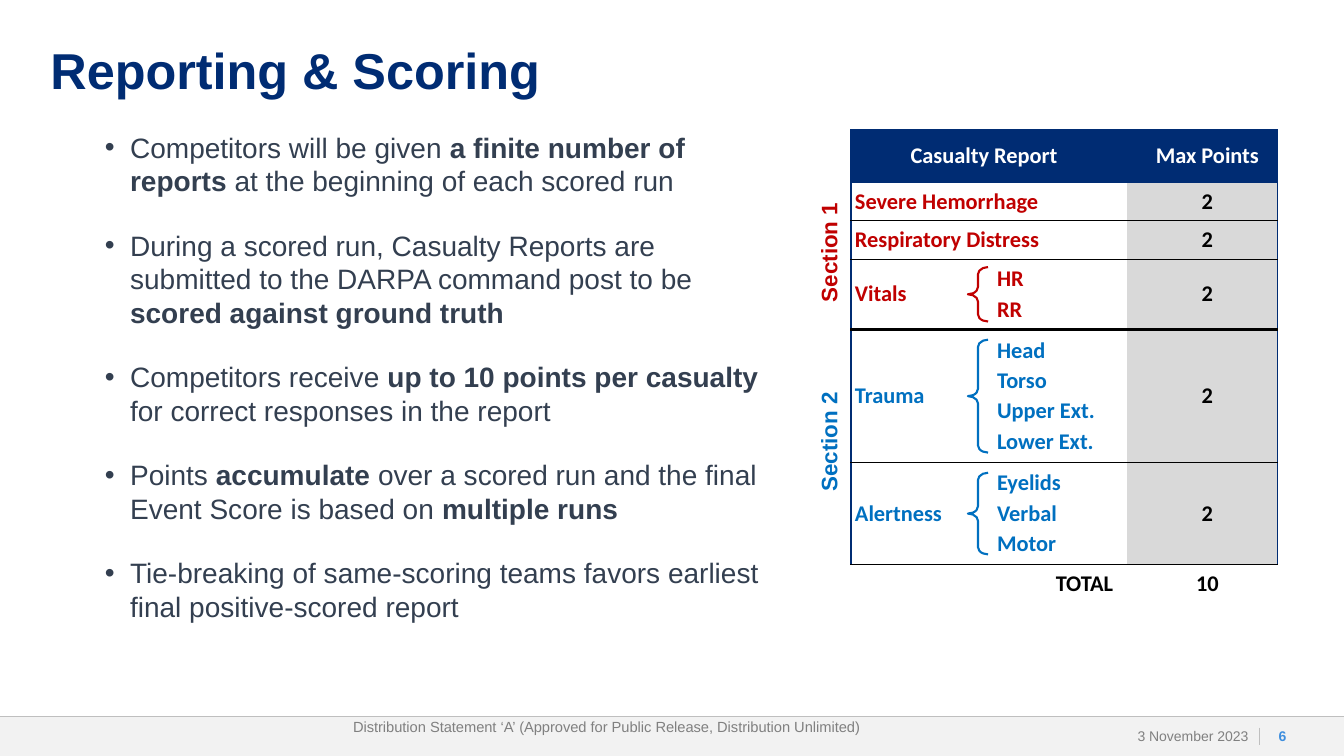
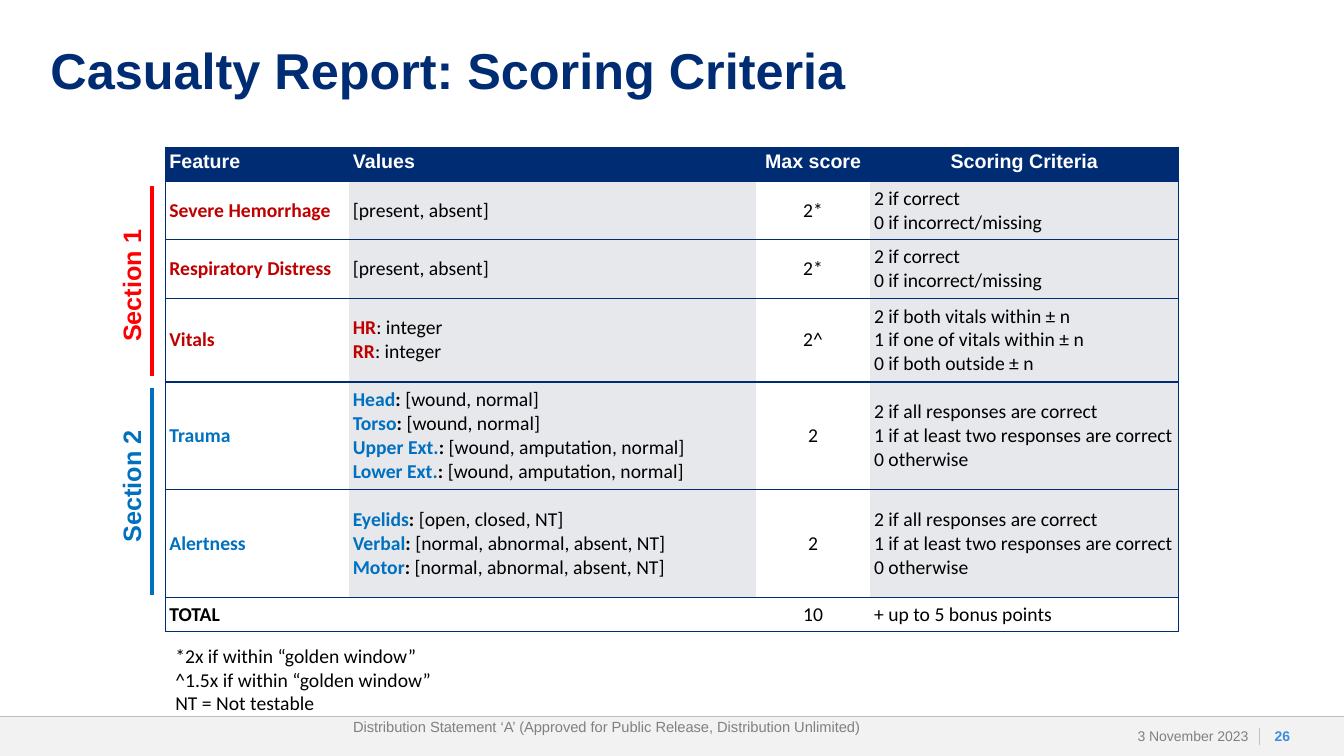
import pptx
import pptx.util
import pptx.dml.color
import pptx.enum.shapes
import pptx.enum.text
import pptx.oxml
import pptx.oxml.ns
from lxml import etree

RGBColor = pptx.dml.color.RGBColor
Inches = pptx.util.Inches
Pt = pptx.util.Pt
Shape = pptx.enum.shapes.MSO_SHAPE
Align = pptx.enum.text.PP_ALIGN
Anchor = pptx.enum.text.MSO_ANCHOR
qn = pptx.oxml.ns.qn

NAVY = RGBColor(0x00, 0x2C, 0x73)
SLATE = RGBColor(0x33, 0x3F, 0x50)
CRIMSON = RGBColor(0xC0, 0x00, 0x00)
RED = RGBColor(0xFF, 0x00, 0x00)
BLUE = RGBColor(0x00, 0x70, 0xC0)
SKY = RGBColor(0x3E, 0x8E, 0xDE)
BLACK = RGBColor(0x00, 0x00, 0x00)
WHITE = RGBColor(0xFF, 0xFF, 0xFF)
GRAY = RGBColor(0x80, 0x80, 0x80)
SILVER = RGBColor(0xBF, 0xBF, 0xBF)
ASH = RGBColor(0xD9, 0xD9, 0xD9)
PALE = RGBColor(0xE7, 0xE8, 0xEB)
BAND = RGBColor(0xF2, 0xF2, 0xF2)

WIDE, HIGH = 13.33, 7.5
LEFT, MID, RIGHT = Align.LEFT, Align.CENTER, Align.RIGHT
PLAIN_STYLE = "{2D5ABB26-0587-4C30-8999-92F81FD0307C}"


def inch(*sizes):
    return [Inches(size) for size in sizes]


def write(frame, paras, size, color, bold=False, font="Arial", align=LEFT, after=0):
    """Fill a frame; a paragraph is a string or a list of (text, colour, bold)."""
    for i, parts in enumerate(paras):
        para = frame.add_paragraph() if i else frame.paragraphs[0]
        para.alignment = align
        para.space_after = Pt(after)
        if isinstance(parts, str):
            parts = [(parts, color, bold)]
        for text, tint, heavy in parts:
            run = para.add_run()
            run.text = text
            run.font.name, run.font.size = font, Pt(size)
            run.font.bold, run.font.color.rgb = heavy, tint


def label(slide, box, paras, size, color, inset=(0.1, 0.05, 0.1, 0.05),
          anchor=Anchor.TOP, wrap=True, **look):
    shape = slide.shapes.add_textbox(*inch(*box))
    frame = shape.text_frame
    frame.word_wrap = wrap
    frame.vertical_anchor = anchor
    (frame.margin_left, frame.margin_top,
     frame.margin_right, frame.margin_bottom) = inch(*inset)
    write(frame, paras, size, color, **look)
    return shape


def line(slide, ends, color, width):
    link = slide.shapes.add_connector(
        pptx.enum.shapes.MSO_CONNECTOR.STRAIGHT, *inch(*ends))
    link.line.color.rgb, link.line.width = color, Pt(width)
    etree.SubElement(link._element.spPr, qn("a:effectLst"))


def upright(slide, box, text, size, color):
    """Bold label that reads from bottom to top."""
    label(slide, box, [text], size, color, bold=True, wrap=False).rotation = 270


def footer(slide, number):
    top, tall = 7.11, 0.39
    band = slide.shapes.add_shape(Shape.RECTANGLE, *inch(0, top, WIDE, tall))
    band.shadow.inherit = False
    band.fill.solid()
    band.fill.fore_color.rgb = BAND
    band.line.fill.background()
    line(slide, (0, top, WIDE, top), SILVER, 0.5)
    line(slide, (12.49, top + 0.11, 12.49, top + 0.28), SILVER, 0.5)
    label(slide, (0.69, top - 0.04, 10.66, 0.28),
          ["Distribution Statement ‘A’ (Approved for Public Release, "
           "Distribution Unlimited)"], 10.5, GRAY, align=MID)
    label(slide, (10.98, top, 1.5, tall), ["3 November 2023"], 10, GRAY,
          (0.1, 0, 0.1, 0), Anchor.MIDDLE, align=RIGHT)
    label(slide, (12.51, top, 0.42, tall), [str(number)], 10, SKY,
          (0, 0, 0, 0), Anchor.MIDDLE, bold=True, align=MID)


def page(deck, title, number):
    slide = deck.slides.add_slide(deck.slide_layouts[6])
    footer(slide, number)
    box = label(slide, (0.5, 0.46, 12.33, 0.83), [title], 36, NAVY,
                (0, 0, 0, 0), bold=True)
    box.text_frame.paragraphs[0].line_spacing = 0.9
    return slide


def grid(slide, spot, cols, rows):
    """Add a table without style at a left and top spot."""
    frame = slide.shapes.add_table(
        len(rows), len(cols), *inch(*spot, sum(cols), sum(rows)))
    table = frame.table
    table.first_row = table.horz_banding = False
    table._tbl.tblPr.find(qn("a:tableStyleId")).text = PLAIN_STYLE
    for col, wide in zip(table.columns, cols):
        col.width = Inches(wide)
    for row, tall in zip(table.rows, rows):
        row.height = Inches(tall)
    return table


def edge(cell, side, color, width):
    stroke = etree.SubElement(cell._tc.get_or_add_tcPr(), qn("a:ln" + side),
                              w=str(Pt(width)))
    fill = etree.SubElement(stroke, qn("a:solidFill"))
    etree.SubElement(fill, qn("a:srgbClr"), val=str(color))


def paint(table, rules, shade):
    """Draw rules[r] above row r, frame the ruled rows and fill by shade(r, c)."""
    last = len(table.columns) - 1
    for r in range(len(table.rows)):
        for c in range(last + 1):
            cell = table.cell(r, c)
            if c == 0 and rules[r + 1]:
                edge(cell, "L", NAVY, 1)
            if c == last and rules[r + 1]:
                edge(cell, "R", NAVY, 1)
            for side, rule in zip("TB", rules[r:r + 2]):
                if rule:
                    edge(cell, side, *rule)
            cell.fill.solid()
            cell.fill.fore_color.rgb = shade(r, c)


def put(cell, paras, size, color, left=0.04, right=0.04, anchor=Anchor.MIDDLE, **look):
    cell.vertical_anchor = anchor
    cell.margin_left, cell.margin_right = inch(left, right)
    cell.margin_top = cell.margin_bottom = Inches(0.04)
    write(cell.text_frame, paras, size, color, **look)
    if not paras:
        end = cell.text_frame.paragraphs[0]._p.get_or_add_endParaRPr()
        end.set("sz", str(size * 100))


def bullets(slide, box, items):
    """Bulleted list; each item is split by | into plain and bold turns."""
    paras = [[(text, SLATE, i % 2 == 1) for i, text in enumerate(item.split("|"))]
             for item in items]
    frame = label(slide, box, paras, 20, SLATE, (0, 0, 0, 0), after=6).text_frame
    for i, para in enumerate(frame.paragraphs):
        para.line_spacing = Pt(24)
        para.space_before = Pt(16 if i else 0)
        props = para._p.get_or_add_pPr()
        props.set("marL", str(Inches(0.25)))
        props.set("indent", str(-Inches(0.25)))
        etree.SubElement(props, qn("a:buFont"), typeface="Arial")
        etree.SubElement(props, qn("a:buChar"), char="•")


def brace(slide, box, color):
    shape = slide.shapes.add_shape(Shape.LEFT_BRACE, *inch(*box))
    shape.shadow.inherit = False
    shape.fill.background()
    shape.line.color.rgb, shape.line.width = color, Pt(1.5)
    shape.adjustments[0] = 0.36


def points(slide, x, y):
    """Table of the points that each part of a report can earn."""
    rows = [0.52, 0.38, 0.38, 0.7, 1.32, 1.01, 0.38]
    parts = [
        ("Severe Hemorrhage", CRIMSON, []),
        ("Respiratory Distress", CRIMSON, []),
        ("Vitals", CRIMSON, ["HR", "RR"]),
        ("Trauma", BLUE, ["Head", "Torso", "Upper Ext.", "Lower Ext."]),
        ("Alertness", BLUE, ["Eyelids", "Verbal", "Motor"]),
    ]
    table = grid(slide, (x, y), [1.41, 1.33, 1.49], rows)
    thin = (BLACK, 0.5)
    rules = [(NAVY, 1)] * 2 + [thin, thin, (BLACK, 2.25), thin, thin, None]

    def shade(r, c):
        if r == 0:
            return NAVY
        return ASH if c == 2 and r < 6 else WHITE

    paint(table, rules, shade)

    def fill(r, c, paras, color, **look):
        left, right = (0.14, 0.04) if c == 2 else (0.04, 0.14)
        put(table.cell(r, c), paras, 16, color, left, right,
            bold=True, font="Calibri", **look)

    for r in range(3):
        table.cell(r, 0).merge(table.cell(r, 1))
    fill(0, 0, ["Casualty Report"], WHITE, align=MID)
    fill(0, 2, ["Max Points"], WHITE, align=MID)
    for r, (name, color, items) in enumerate(parts, 1):
        fill(r, 0, [name], color)
        fill(r, 2, ["2"], BLACK, align=MID, after=2 if items else 0)
        if items:
            fill(r, 1, items, color, after=2)
            pad = 0.08 if r == 3 else 0.1
            brace(slide, (x + 1.16, y + sum(rows[:r]) + pad, 0.2, rows[r] - 2 * pad), color)
    fill(6, 0, [], BLACK)
    fill(6, 1, ["TOTAL"], BLACK, align=RIGHT, after=2)
    fill(6, 2, ["10"], BLACK, align=MID, after=2)
    for text, drop, color in (("Section 1", 1.02, CRIMSON), ("Section 2", 2.9, BLUE)):
        upright(slide, (x - 0.82, y + drop, 1.2, 0.37), text, 16, color)


def pairs(color, heavy, items):
    """Paragraphs of a bold coloured name, a colon and its value."""
    return [[(name, color, True), (": ", BLACK, heavy), (value, BLACK, False)]
            for name, value in items]


def scores(slide, x, y):
    """Table of values and scoring rules, with section marks on its left."""
    flag = ["[present, absent]"]
    right = ["2 if correct", "0 if incorrect/missing"]
    most = ["2 if all responses are correct",
            "1 if at least two responses are correct", "0 otherwise"]
    near = ["2 if both vitals within ± n", "1 if one of vitals within ± n",
            "0 if both outside ± n"]
    vitals = pairs(CRIMSON, False, [("HR", "integer"), ("RR", "integer")])
    wound, limb = "[wound, normal]", "[wound, amputation, normal]"
    trauma = pairs(BLUE, True, [("Head", wound), ("Torso", wound),
                                ("Upper Ext.", limb), ("Lower Ext.", limb)])
    sense = "[normal, abnormal, absent, NT]"
    alert = pairs(BLUE, True, [("Eyelids", "[open, closed, NT]"),
                               ("Verbal", sense), ("Motor", sense)])
    body = [
        ("Severe Hemorrhage", CRIMSON, flag, "2*", right),
        ("Respiratory Distress", CRIMSON, flag, "2*", right),
        ("Vitals", CRIMSON, vitals, "2^", near),
        ("Trauma", BLUE, trauma, "2", most),
        ("Alertness", BLUE, alert, "2", most),
        ("TOTAL", BLACK, [], "10", ["+ up to 5 bonus points"]),
    ]
    table = grid(slide, (x, y), [1.82, 4.04, 1.13, 3.06],
                 [0.34, 0.58, 0.58, 0.83, 1.07, 1.07, 0.34])

    def shade(r, c):
        if r == 0:
            return NAVY
        return PALE if c % 2 and r < 6 else WHITE

    paint(table, [(NAVY, 1)] * 8, shade)
    for c, head in enumerate(("Feature", "Values", "Max score", "Scoring Criteria")):
        put(table.cell(0, c), [head], 14, WHITE, anchor=Anchor.TOP, bold=True,
            align=MID if c > 1 else LEFT)
    for r, (name, color, values, top, tests) in enumerate(body, 1):
        put(table.cell(r, 0), [name], 14, color, bold=True, font="Calibri")
        for c, paras in enumerate((values, [top], tests), 1):
            put(table.cell(r, c), paras, 14, BLACK, font="Calibri",
                align=MID if c == 2 else LEFT)
    for text, start, size, drop, color in (("Section 1", 0.39, 1.88, 1.17, RED),
                                           ("Section 2", 2.39, 2.05, 3.16, BLUE)):
        line(slide, (x - 0.13, y + start, x - 0.13, y + start + size), color, 3)
        upright(slide, (x - 1, y + drop, 1.32, 0.4), text, 18, color)


def main():
    deck = pptx.Presentation()
    deck.slide_width, deck.slide_height = inch(WIDE, HIGH)

    slide = page(deck, "Reporting & Scoring", 6)
    bullets(slide, (1.04, 1.29, 6.59, 5.5), [
        "Competitors will be given |a finite number of reports |"
        "at the beginning of each scored run",
        "During a scored run, Casualty Reports are submitted to the DARPA "
        "command post to be |scored against ground truth",
        "Competitors receive |up to 10 points per casualty |"
        "for correct responses in the report",
        "Points |accumulate| over a scored run and the final Event Score "
        "is based on |multiple runs",
        "Tie-breaking of same-scoring teams favors earliest final "
        "positive-scored report",
    ])
    points(slide, 8.44, 1.29)

    slide = page(deck, "Casualty Report: Scoring Criteria", 26)
    scores(slide, 1.64, 1.46)
    label(slide, (1.64, 6.34, 5.29, 0.81),
          ["*2x if within “golden window”", "^1.5x if within “golden window”",
           "NT = Not testable"], 14, BLACK, font="Calibri")
    deck.save("out.pptx")


if __name__ == "__main__":
    main()
